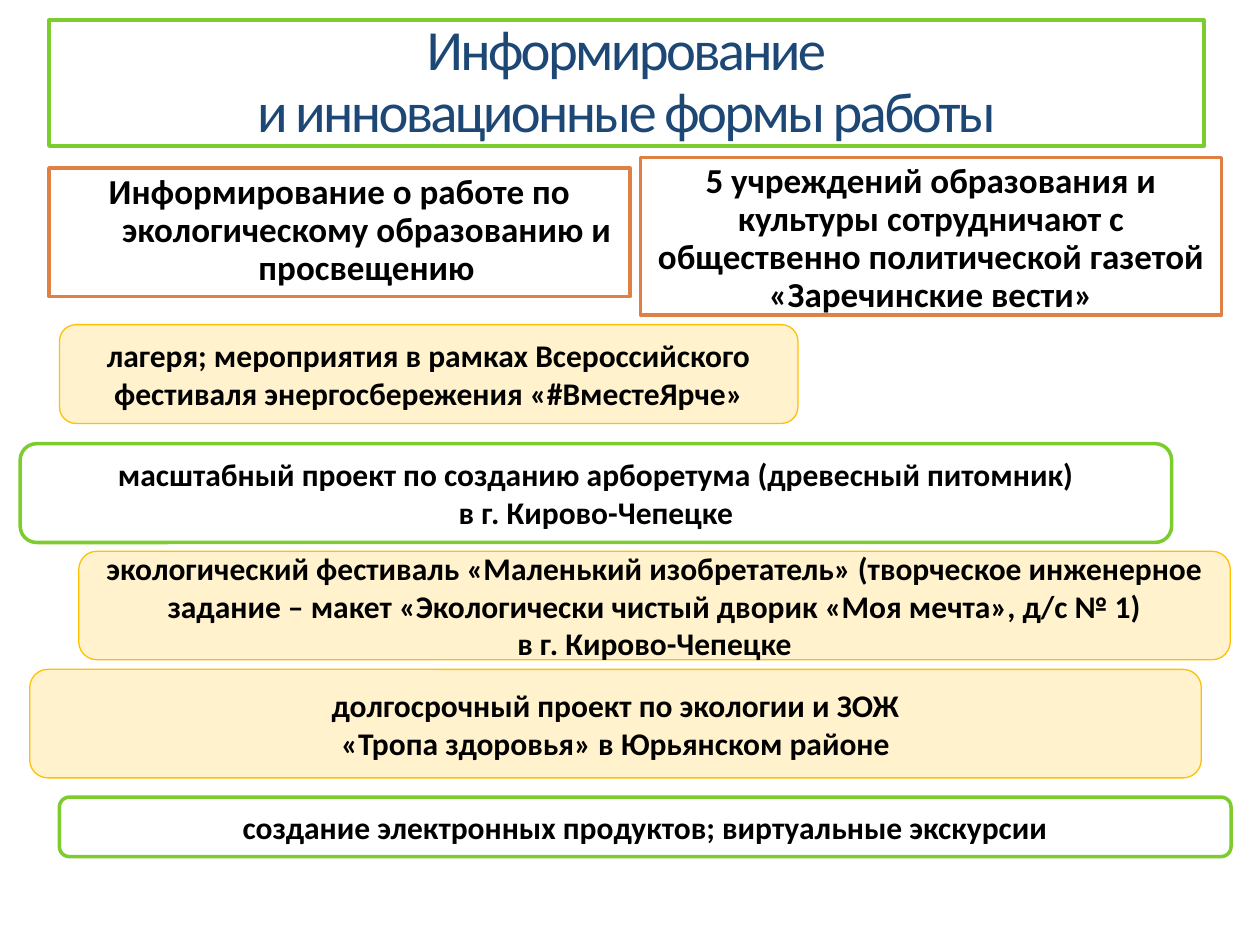
import pptx
import pptx.dml.color
import pptx.enum.shapes
import pptx.enum.text
import pptx.util

Pt = pptx.util.Pt
SHAPES = pptx.enum.shapes.MSO_SHAPE
ANCHOR = pptx.enum.text.MSO_ANCHOR
CENTER = pptx.enum.text.PP_ALIGN.CENTER

COLORS = {
    "white": "FFFFFF",
    "black": "000000",
    "navy": "1D4775",
    "green": "7DCC2E",
    "orange": "DF8045",
    "gold": "FFC000",
    "cream": "FFF2CC",
}
OUTLINED = ("white", "green", 2)
FILLED = ("cream", "gold", 0.75)
FRAMED = ("white", "orange", 2)

STATEMENTS = [
    ((28, 96, 332, 73.5), 31,
     "Информирование о работе по экологическому образованию и просвещению"),
    ((366, 90, 332, 90), 0,
     "5 учреждений образования и культуры сотрудничают с "
     "общественно политической газетой «Заречинские вести»"),
]
ACTIVITIES = [
    ((34, 185.5, 422, 56.5), FILLED,
     ["лагеря; мероприятия в рамках Всероссийского фестиваля "
      "энергосбережения «#ВместеЯрче»"]),
    ((11.5, 253.5, 658, 56.5), OUTLINED,
     ["масштабный проект по созданию арборетума (древесный питомник)",
      "в г. Кирово-Чепецке"]),
    ((45, 315, 658, 62), FILLED,
     ["экологический фестиваль «Маленький изобретатель» (творческое "
      "инженерное задание – макет «Экологически чистый дворик «Моя мечта», "
      "д/с № 1)",
      "в г. Кирово-Чепецке"]),
    ((17, 382.5, 669.5, 62), FILLED,
     ["долгосрочный проект по экологии и ЗОЖ",
      "«Тропа здоровья» в Юрьянском районе"]),
    ((34, 455.5, 669.5, 34), OUTLINED,
     ["создание электронных продуктов; виртуальные экскурсии"]),
]


def rgb(name):
    return pptx.dml.color.RGBColor.from_string(COLORS[name])


def paint(shape, look):
    fill, line, width = look
    shape.fill.solid()
    shape.fill.fore_color.rgb = rgb(fill)
    shape.line.color.rgb = rgb(line)
    shape.line.width = Pt(width)


def add_run(paragraph, text, size, color, bold):
    run = paragraph.add_run()
    run.text = text
    run.font.name = "Calibri"
    run.font.size = Pt(size)
    run.font.bold = bold
    run.font.color.rgb = rgb(color)
    return run


def add_heading(slide, lines):
    heading = slide.shapes.title
    heading.left, heading.top, heading.width, heading.height = map(
        Pt, (28, 11.5, 660, 72))
    paint(heading, OUTLINED)
    frame = heading.text_frame
    frame.auto_size = pptx.enum.text.MSO_AUTO_SIZE.NONE
    frame.vertical_anchor = ANCHOR.MIDDLE
    frame.margin_left = frame.margin_right = Pt(0)
    frame.margin_top = frame.margin_bottom = Pt(0)
    paragraph = frame.paragraphs[0]
    paragraph.alignment = CENTER
    paragraph.line_spacing = 0.9
    for number, line in enumerate(lines):
        if number:
            paragraph.add_line_break()
        run = add_run(paragraph, line, 32.4, "navy", False)
        run.font._element.set("spc", "-150")


def add_panel(slide, kind, place, look, lines, size, anchor):
    panel = slide.shapes.add_shape(kind, *map(Pt, place))
    panel.shadow.inherit = False
    paint(panel, look)
    frame = panel.text_frame
    frame.word_wrap = True
    frame.vertical_anchor = anchor
    for number, line in enumerate(lines):
        paragraph = frame.add_paragraph() if number else frame.paragraphs[0]
        paragraph.alignment = CENTER
        add_run(paragraph, line, size, "black", True)
    return panel


def add_statement(slide, place, hanging, text):
    statement = add_panel(slide, SHAPES.RECTANGLE, place, FRAMED, [text],
                          20, ANCHOR.TOP)
    paragraph = statement.text_frame.paragraphs[0]
    paragraph.line_spacing = 0.9
    if hanging:
        properties = paragraph._p.get_or_add_pPr()
        properties.set("marL", str(Pt(hanging)))
        properties.set("indent", str(-Pt(hanging)))


def add_activity(slide, place, look, lines):
    add_panel(slide, SHAPES.ROUNDED_RECTANGLE, place, look, lines,
              18, ANCHOR.MIDDLE)


def main():
    deck = pptx.Presentation()
    deck.slide_width, deck.slide_height = Pt(720), Pt(540)
    slide = deck.slides.add_slide(deck.slide_layouts[5])
    add_heading(slide, ["Информирование", "и инновационные формы работы"])
    for statement in STATEMENTS:
        add_statement(slide, *statement)
    for activity in ACTIVITIES:
        add_activity(slide, *activity)
    deck.save("out.pptx")


if __name__ == "__main__":
    main()
